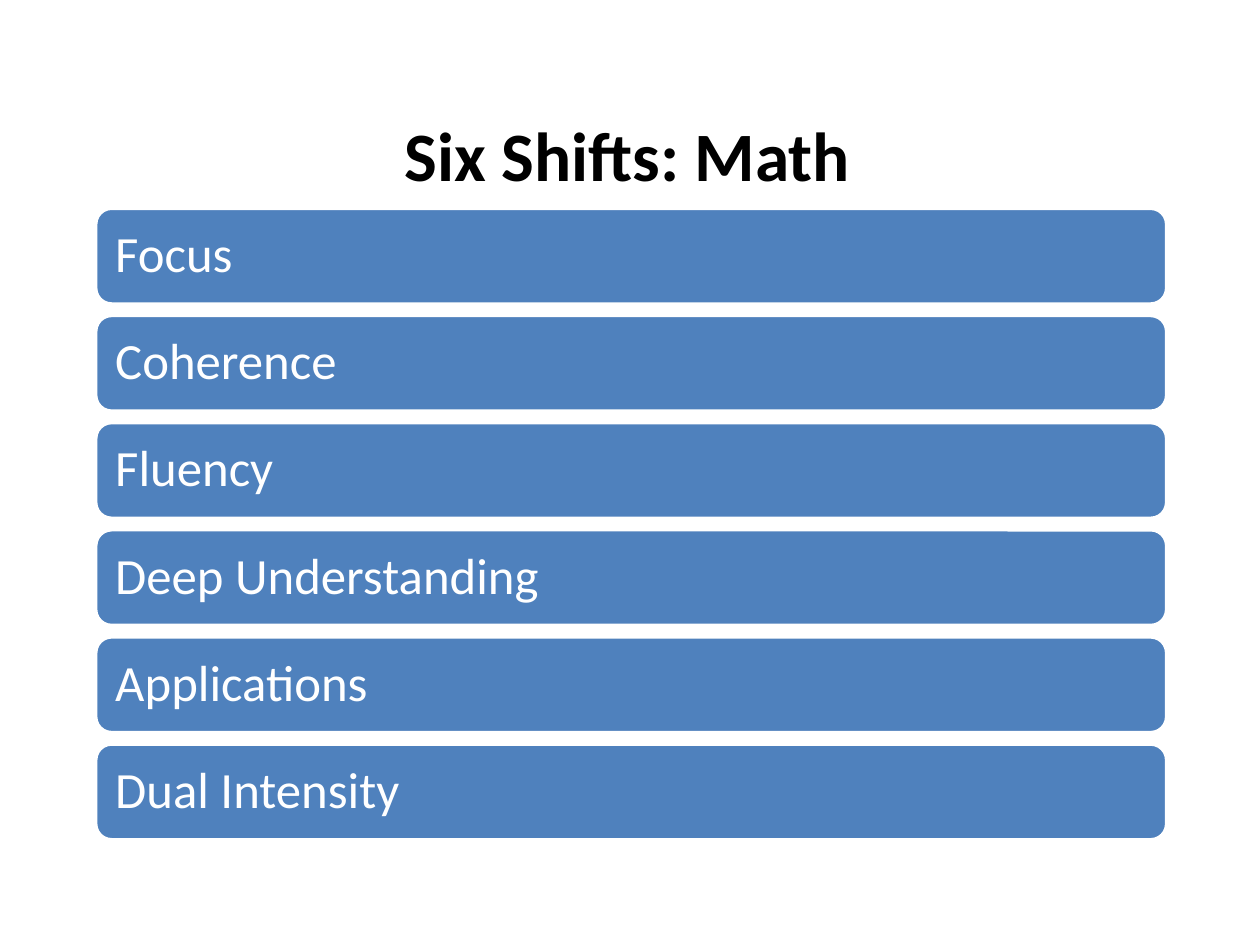
"""Build the slide listing the six shifts in math."""
from dataclasses import dataclass

import pptx
import pptx.dml.color
import pptx.enum.shapes
import pptx.enum.text
import pptx.presentation
import pptx.shapes.autoshape
import pptx.slide
import pptx.util

Cm = pptx.util.Cm
Pt = pptx.util.Pt
HUES = {"bar": "4F81BD", "edge": "FFFFFF", "label": "FFFFFF", "title": "000000"}
FONT = "Calibri"
SHIFTS = (
    "Focus",
    "Coherence",
    "Fluency",
    "Deep Understanding",
    "Applications",
    "Dual Intensity",
)
TOP, PITCH = 4.2, 2.16


@dataclass(frozen=True)
class Label:
    text: str
    left: float
    top: float
    width: float
    height: float
    size: float
    hue: str
    align: pptx.enum.text.PP_ALIGN
    inset: float
    bold: bool = False
    space: float = 1.0


def color(name: str) -> pptx.dml.color.RGBColor:
    """Return the named colour."""
    return pptx.dml.color.RGBColor.from_string(HUES[name])


def frame(label: Label) -> tuple[pptx.util.Length, ...]:
    """Return the left, top, width and height of a label."""
    return tuple(Cm(n) for n in (label.left, label.top, label.width, label.height))


def write(shape: pptx.shapes.autoshape.Shape, label: Label) -> None:
    """Set the text of a label in its shape."""
    body = shape.text_frame
    body.word_wrap = True
    body.vertical_anchor = pptx.enum.text.MSO_ANCHOR.MIDDLE
    body.margin_left = body.margin_right = Cm(label.inset)
    body.margin_top = body.margin_bottom = Cm(0.13)
    line = body.paragraphs[0]
    line.text = label.text
    line.alignment = label.align
    line.line_spacing = label.space
    line.font.name = FONT
    line.font.size = Pt(label.size)
    line.font.bold = label.bold
    line.font.color.rgb = color(label.hue)


def draw_bar(slide: pptx.slide.Slide, label: Label) -> None:
    """Draw one rounded bar with its label."""
    kind = pptx.enum.shapes.MSO_SHAPE.ROUNDED_RECTANGLE
    bar = slide.shapes.add_shape(kind, *frame(label))
    bar.shadow.inherit = False
    bar.fill.solid()
    bar.fill.fore_color.rgb = color("bar")
    bar.line.color.rgb = color("edge")
    bar.line.width = Pt(2)
    write(bar, label)


def draw_title(slide: pptx.slide.Slide, label: Label) -> None:
    """Draw the title as a text box."""
    write(slide.shapes.add_textbox(*frame(label)), label)


def main() -> None:
    """Build and save the deck."""
    deck = pptx.Presentation()
    deck.slide_width, deck.slide_height = Cm(25.4), Cm(19.05)
    slide = deck.slides.add_slide(deck.slide_layouts[6])
    align = pptx.enum.text.PP_ALIGN
    for row, text in enumerate(SHIFTS):
        top = TOP + row * PITCH
        draw_bar(slide, Label(text, 1.93, top, 21.59, 1.93, 29, "label",
                              align.LEFT, 0.3, space=0.9))
    draw_title(slide, Label("Six Shifts: Math", 2.9, 2.13, 19.5, 1.93, 39.6,
                            "title", align.CENTER, 0.25, bold=True))
    deck.save("out.pptx")


if __name__ == "__main__":
    main()
